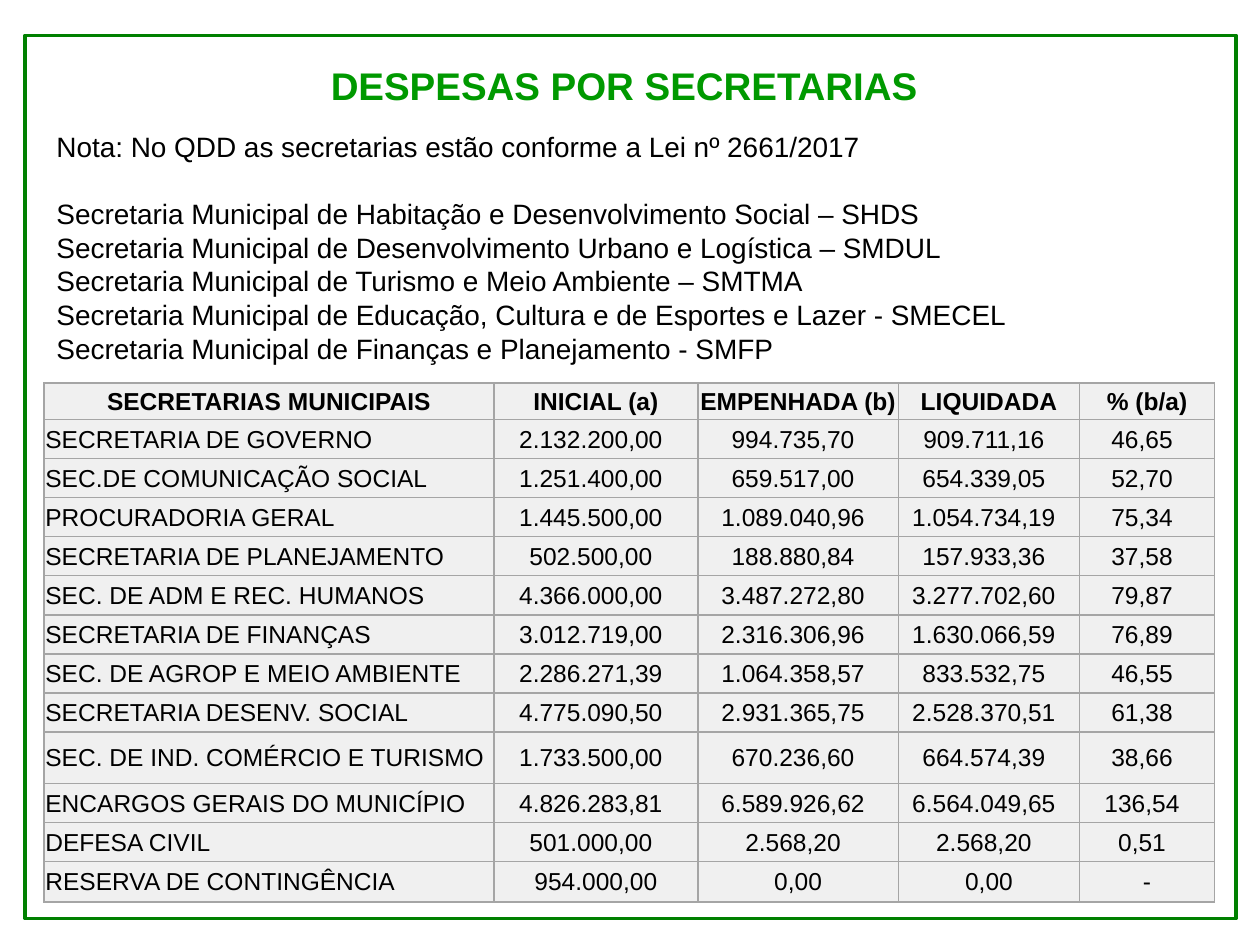
from dataclasses import dataclass

from lxml import etree
from pptx import Presentation
from pptx.dml.color import RGBColor
from pptx.enum.shapes import MSO_SHAPE
from pptx.enum.text import MSO_ANCHOR, MSO_AUTO_SIZE, PP_ALIGN
from pptx.oxml.ns import qn
from pptx.util import Inches, Pt

RECT = MSO_SHAPE.RECTANGLE
MIDDLE = MSO_ANCHOR.MIDDLE
GROW = MSO_AUTO_SIZE.SHAPE_TO_FIT_TEXT
LEFT, CENTER = PP_ALIGN.LEFT, PP_ALIGN.CENTER


@dataclass(frozen=True)
class Theme:
    font: str = "Arial"
    frame: str = "008000"
    title: str = "009900"
    text: str = "000000"
    fill: str = "F0F0F0"
    grid: str = "A5A5A5"
    title_size: int = 22
    note_size: int = 16
    cell_size: int = 14


THEME = Theme()

NOTE = "Nota: No QDD as secretarias estão conforme a Lei nº 2661/2017"
OFFICES = [
    "Secretaria Municipal de Habitação e Desenvolvimento Social – SHDS",
    "Secretaria Municipal de Desenvolvimento Urbano e Logística – SMDUL",
    "Secretaria Municipal de Turismo e Meio Ambiente – SMTMA",
    "Secretaria Municipal de Educação, Cultura e de Esportes e Lazer - SMECEL",
    "Secretaria Municipal de Finanças e Planejamento - SMFP",
]

ROWS = [
    ("SECRETARIAS MUNICIPAIS", "INICIAL (a)", "EMPENHADA (b)", "LIQUIDADA", "% (b/a)"),
    ("SECRETARIA DE GOVERNO", "2.132.200,00", "994.735,70", "909.711,16", "46,65"),
    ("SEC.DE COMUNICAÇÃO SOCIAL", "1.251.400,00", "659.517,00", "654.339,05", "52,70"),
    ("PROCURADORIA GERAL", "1.445.500,00", "1.089.040,96", "1.054.734,19", "75,34"),
    ("SECRETARIA DE PLANEJAMENTO", "502.500,00", "188.880,84", "157.933,36", "37,58"),
    ("SEC. DE ADM E REC. HUMANOS", "4.366.000,00", "3.487.272,80", "3.277.702,60", "79,87"),
    ("SECRETARIA DE FINANÇAS", "3.012.719,00", "2.316.306,96", "1.630.066,59", "76,89"),
    ("SEC. DE AGROP E MEIO AMBIENTE", "2.286.271,39", "1.064.358,57", "833.532,75", "46,55"),
    ("SECRETARIA DESENV. SOCIAL", "4.775.090,50", "2.931.365,75", "2.528.370,51", "61,38"),
    ("SEC. DE IND. COMÉRCIO E TURISMO", "1.733.500,00", "670.236,60", "664.574,39", "38,66"),
    ("ENCARGOS GERAIS DO MUNICÍPIO", "4.826.283,81", "6.589.926,62", "6.564.049,65", "136,54"),
    ("DEFESA CIVIL", "501.000,00", "2.568,20", "2.568,20", "0,51"),
    ("RESERVA DE CONTINGÊNCIA", "954.000,00", "0,00", "0,00", "-"),
]
WIDTHS = [3.57, 1.62, 1.59, 1.44, 1.07]
HEIGHTS = [0.29] + [0.31] * 8 + [0.41, 0.31, 0.31, 0.32]


def rgb(code):
    return RGBColor.from_string(code)


def box(left, top, width, height):
    return Inches(left), Inches(top), Inches(width), Inches(height)


def add_run(para, text, size, color, bold=False):
    run = para.add_run()
    run.text = text
    font = run.font
    font.name = THEME.font
    font.size = Pt(size)
    font.bold = bold
    font.color.rgb = rgb(color)


def add_frame(slide):
    shape = slide.shapes.add_shape(RECT, *box(0.2, 0.28, 9.61, 7.01))
    shape.shadow.inherit = False
    shape.fill.background()
    shape.line.color.rgb = rgb(THEME.frame)
    shape.line.width = Pt(2)


def add_text(slide, place, lines, size, color, bold=False, align=LEFT):
    """Add a text box with one paragraph per line and return its paragraphs."""
    frame = slide.shapes.add_textbox(*box(*place)).text_frame
    frame.word_wrap = True
    frame.auto_size = GROW
    for num, line in enumerate(lines):
        para = frame.add_paragraph() if num else frame.paragraphs[0]
        para.alignment = align
        add_run(para, line, size, color, bold)
    return frame.paragraphs


def add_borders(cell):
    props = cell._tc.get_or_add_tcPr()
    for num, side in enumerate(("a:lnL", "a:lnR", "a:lnT", "a:lnB")):
        line = etree.Element(qn(side), w=str(Pt(1)))
        fill = etree.SubElement(line, qn("a:solidFill"))
        etree.SubElement(fill, qn("a:srgbClr"), val=THEME.grid)
        props.insert(num, line)


def fill_cell(cell, text, align, bold, right):
    cell.fill.solid()
    cell.fill.fore_color.rgb = rgb(THEME.fill)
    cell.vertical_anchor = MIDDLE
    cell.margin_left = cell.margin_top = Inches(0.01)
    cell.margin_right = Inches(right)
    cell.margin_bottom = 0
    para = cell.text_frame.paragraphs[0]
    para.alignment = align
    add_run(para, text, THEME.cell_size, THEME.text, bold)
    add_borders(cell)


def add_grid(slide):
    place = box(0.35, 3.04, sum(WIDTHS), sum(HEIGHTS))
    table = slide.shapes.add_table(len(ROWS), len(WIDTHS), *place).table
    for col, width in zip(table.columns, WIDTHS):
        col.width = Inches(width)
    for row, height in zip(table.rows, HEIGHTS):
        row.height = Inches(height)
    last = len(ROWS) - 1
    for r, row in enumerate(ROWS):
        for c, text in enumerate(row):
            head = r == 0
            align = CENTER if head or c else LEFT
            right = 0.09 if c and 0 < r < last else 0.01
            fill_cell(table.cell(r, c), text, align, head, right)


def main():
    deck = Presentation()
    deck.slide_width, deck.slide_height = Inches(10), Inches(7.5)
    slide = deck.slides.add_slide(deck.slide_layouts[6])
    add_frame(slide)
    add_text(slide, (0.94, 0.44, 8.11, 0.47), ["DESPESAS POR SECRETARIAS "],
             THEME.title_size, THEME.title, True, CENTER)
    add_grid(slide)
    paras = add_text(slide, (0.35, 0.98, 8.43, 1.99), [NOTE] + OFFICES,
                     THEME.note_size, THEME.text)
    paras[0].space_after = Pt(19.2)
    deck.save("out.pptx")


if __name__ == "__main__":
    main()
